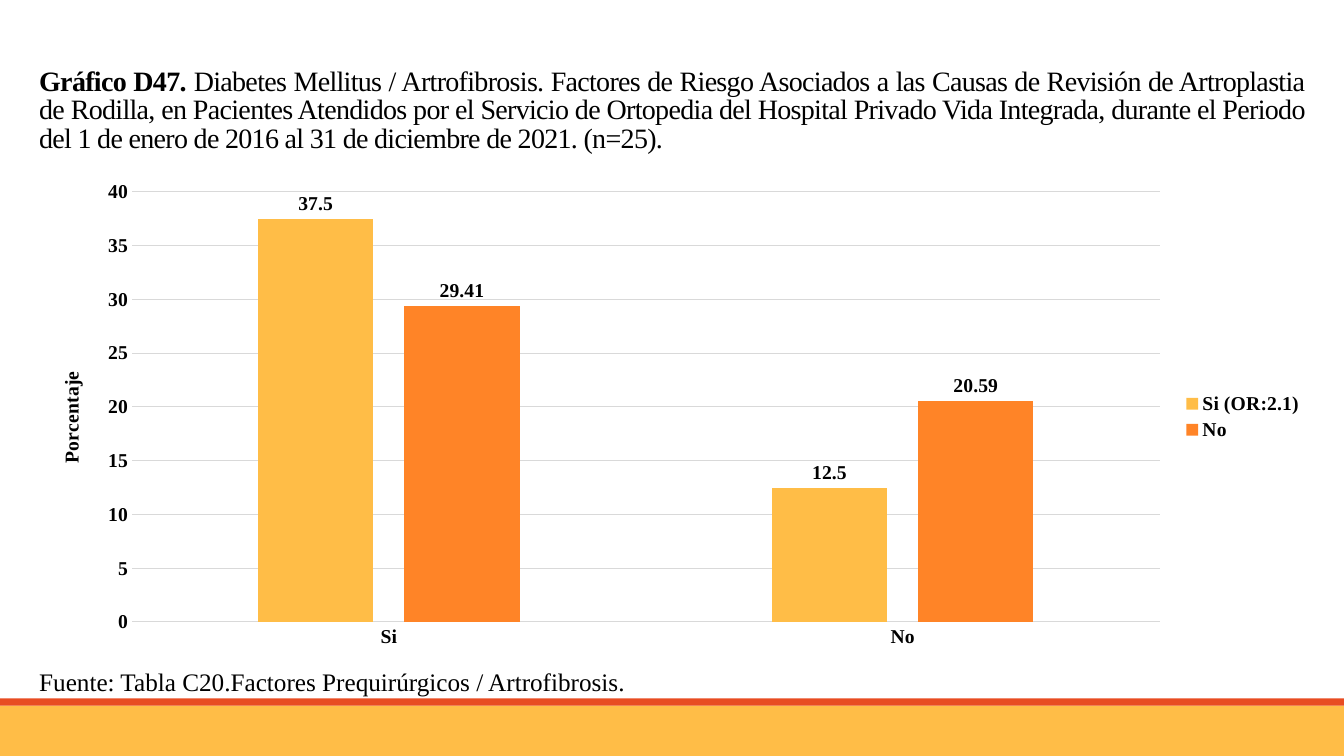
from dataclasses import dataclass

from lxml import etree
from pptx import Presentation, util as u
from pptx.chart.data import CategoryChartData
from pptx.dml.color import RGBColor
from pptx.enum import chart as ch, shapes, text
from pptx.oxml import parse_xml
from pptx.oxml.ns import nsdecls, qn

WIDTH, HEIGHT = u.Inches(13.33), u.Inches(7.5)
FONT = "Times New Roman"
COLORS = {"ink": "000000", "amber": "FFBD47", "orange": "FF8427",
          "red": "E84C22", "grid": "D9D9D9"}


@dataclass(frozen=True)
class Area:
    """A rectangle in shares of the slide's, or the chart's, size."""
    left: float
    top: float
    width: float
    height: float

    def on_slide(self) -> tuple[int, int, int, int]:
        return (round(self.left * WIDTH), round(self.top * HEIGHT),
                round(self.width * WIDTH), round(self.height * HEIGHT))


@dataclass(frozen=True)
class Band:
    area: Area
    color: str


@dataclass(frozen=True)
class Answer:
    name: str
    percentages: tuple[float, ...]
    color: str


MARGIN, CONTENT = 0.29 / 13.33, 12.74 / 13.33
HEADING = Area(MARGIN, 0.31 / 7.5, CONTENT, 1.59 / 7.5)
GRAPH = Area(MARGIN, 1.71 / 7.5, CONTENT, 4.85 / 7.5)
SOURCE = Area(MARGIN, 6.56 / 7.5, 7.29 / 13.33, 0.4 / 7.5)
BANDS = (Band(Area(0, 7 / 7.5, 1, 0.5 / 7.5), "amber"),
         Band(Area(0, 6.93 / 7.5, 1, 0.07 / 7.5), "red"))
ANSWERS = (Answer("Si (OR:2.1)", (37.5, 12.5), "amber"),
           Answer("No", (29.41, 20.59), "orange"))
HEADING_RUNS = (
    ("Gráfico D47. ", True),
    ("Diabetes Mellitus / Artrofibrosis. Factores de Riesgo Asociados a las "
     "Causas de Revisión de Artroplastia de Rodilla, en Pacientes Atendidos por "
     "el Servicio de Ortopedia del Hospital Privado Vida Integrada, durante el "
     "Periodo del 1 de enero de 2016 al 31 de diciembre de 2021. (n=25).", False),
)


def rgb(name: str) -> RGBColor:
    return RGBColor.from_string(COLORS[name])


def style(font, size: float) -> None:
    font.name, font.size = FONT, u.Pt(size)
    font.color.rgb = rgb("ink")


def add_band(slide, band: Band) -> None:
    bar = slide.shapes.add_shape(shapes.MSO_SHAPE.RECTANGLE, *band.area.on_slide())
    bar.shadow.inherit = False
    bar.fill.solid()
    bar.fill.fore_color.rgb = rgb(band.color)
    bar.line.fill.background()


def add_paragraph(slide, area: Area, size: float):
    """Add a wrapping text box and return its styled paragraph."""
    frame = slide.shapes.add_textbox(*area.on_slide()).text_frame
    frame.word_wrap = True
    frame.vertical_anchor = text.MSO_ANCHOR.MIDDLE
    style(frame.paragraphs[0].font, size)
    return frame.paragraphs[0]


def add_heading(slide) -> None:
    heading = add_paragraph(slide, HEADING, 20)
    heading.alignment = text.PP_ALIGN.JUSTIFY
    heading.line_spacing = 0.85
    for words, bold in HEADING_RUNS:
        run = heading.add_run()
        run.text, run.font.bold = words, bold
        run.font._element.set("spc", "-50")


def place(parent, index: int, **shares) -> None:
    """Fix the position of a chart part in shares of the chart."""
    for old in parent.findall(qn("c:layout")):
        parent.remove(old)
    layout = parse_xml(f"<c:layout {nsdecls('c')}><c:manualLayout/></c:layout>")
    for tag, value in shares.items():
        etree.SubElement(layout[0], qn(f"c:{tag}")).set("val", str(value))
    parent.insert(index, layout)


def style_axes(chart) -> None:
    categories, percent = chart.category_axis, chart.value_axis
    for axis in (categories, percent):
        axis.major_tick_mark = axis.minor_tick_mark = ch.XL_TICK_MARK.NONE
    for line in (categories.format.line, percent.major_gridlines.format.line):
        line.color.rgb = rgb("grid")
        line.width = u.Pt(0.75)
    percent.format.line.fill.background()
    percent.minimum_scale, percent.maximum_scale, percent.major_unit = 0, 40, 5

    caption = percent.axis_title.text_frame.paragraphs[0]
    caption.text = "Porcentaje"
    style(caption.font, 14)
    caption.font.bold = True
    place(percent.axis_title._element, 1, xMode="edge", yMode="edge", x=0.02, y=0.4)


def add_graph(slide) -> None:
    data = CategoryChartData()
    data.categories = ["Si", "No"]
    for answer in ANSWERS:
        data.add_series(answer.name, answer.percentages)
    chart = slide.shapes.add_chart(
        ch.XL_CHART_TYPE.COLUMN_CLUSTERED, *GRAPH.on_slide(), data).chart
    style(chart.font, 14)
    chart.font.bold = True
    chart.has_title = False
    chart.has_legend = True
    chart.legend.position = ch.XL_LEGEND_POSITION.RIGHT
    chart.legend.include_in_layout = False
    style_axes(chart)

    plot = chart.plots[0]
    plot.gap_width, plot.overlap = 219, -27
    plot.vary_by_categories = False
    for answer, columns in zip(ANSWERS, plot.series):
        columns.format.fill.solid()
        columns.format.fill.fore_color.rgb = rgb(answer.color)
        labels = columns.data_labels
        labels.show_value = True
        labels.position = ch.XL_LABEL_POSITION.OUTSIDE_END
        style(labels.font, 14)
        labels.font.bold = True
    place(chart._chartSpace.chart.plotArea, 0, layoutTarget="inner",
          xMode="edge", yMode="edge", x=0.08, y=0.04, w=0.8, h=0.88)


def main() -> None:
    deck = Presentation()
    deck.slide_width, deck.slide_height = WIDTH, HEIGHT
    slide = deck.slides.add_slide(deck.slide_layouts[6])
    for band in BANDS:
        add_band(slide, band)
    add_heading(slide)
    add_graph(slide)
    source = add_paragraph(slide, SOURCE, 18)
    source.add_run().text = "Fuente: Tabla C20.Factores Prequirúrgicos / Artrofibrosis."
    deck.save("out.pptx")


if __name__ == "__main__":
    main()
